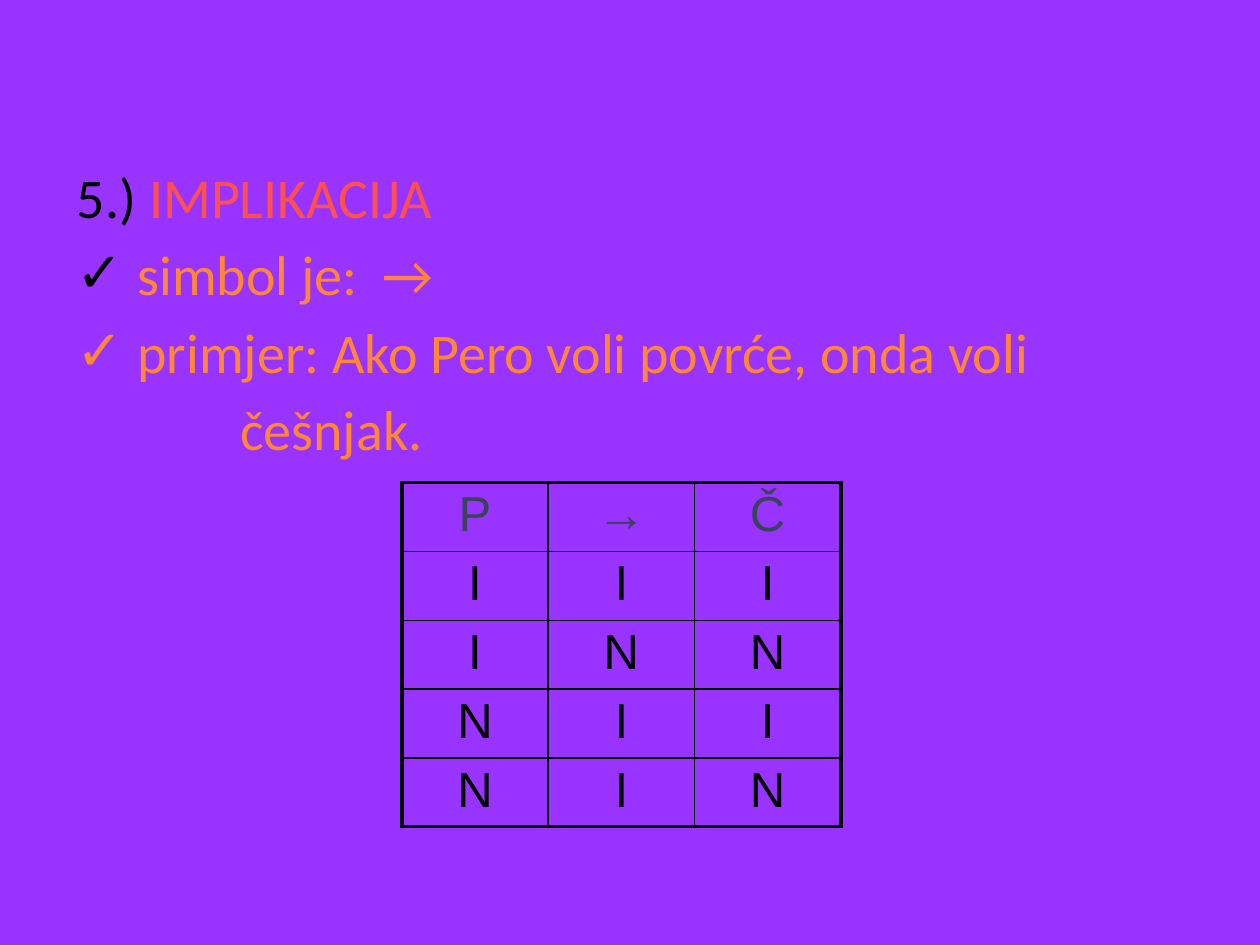
from dataclasses import dataclass

from lxml import etree
from pptx import Presentation
from pptx import util as u
from pptx.dml.color import RGBColor
from pptx.enum import text
from pptx.oxml import ns

BLACK, RED, ORANGE, SLATE, PURPLE = "000000", "FF5050", "FE8637", "3B435B", "9933FF"
BODY_FONT = {"name": "Calibri", "size": u.Pt(32)}
CELL_FONT = {"name": "Arial", "size": u.Pt(28)}
LINE_FORMAT = {"space_before": u.Pt(5.8)}
FRAME_FORMAT = {"word_wrap": True, "vertical_anchor": text.MSO_ANCHOR.TOP}
CELL_FORMAT = {"margin_top": u.Cm(0.1), "margin_bottom": u.Cm(0.1),
               "vertical_anchor": text.MSO_ANCHOR.TOP}
OUTER, INNER = u.Pt(2.25), u.Pt(1)


@dataclass
class Line:
    runs: list[tuple[str, str]]
    left: float = 0
    check_color: str = ""


LINES = [
    Line([("5.) ", BLACK), ("IMPLIKACIJA", RED)]),
    Line([("simbol je:  →", ORANGE)], 1.22, BLACK),
    Line([("primjer: Ako Pero voli povrće, onda voli", ORANGE)], 1.22, ORANGE),
    Line([("češnjak.", ORANGE)], 3.29),
]
TRUTH_ROWS = ["P→Č", "III", "INN", "NII", "NIN"]


def color(hex_value: str) -> RGBColor:
    return RGBColor.from_string(hex_value)


def apply(target, values: dict) -> None:
    for key, value in values.items():
        setattr(target, key, value)


def sub(parent, tag: str, **attributes):
    return etree.SubElement(parent, ns.qn(tag), attributes)


def add_run(paragraph, words: str, font: dict, hex_value: str) -> None:
    run = paragraph.add_run()
    run.text = words
    apply(run.font, font)
    run.font.color.rgb = color(hex_value)


def write_line(paragraph, line: Line) -> None:
    apply(paragraph, LINE_FORMAT)
    properties = paragraph._p.get_or_add_pPr()
    properties.set("marL", str(u.Cm(line.left)))
    if line.check_color:
        properties.set("indent", str(-u.Cm(line.left)))
        sub(sub(properties, "a:buClr"), "a:srgbClr", val=line.check_color)
        sub(properties, "a:buFont", typeface="Arial")
        sub(properties, "a:buChar", char="✓")
    for words, hex_value in line.runs:
        add_run(paragraph, words, BODY_FONT, hex_value)


def draw_cell(cell, symbol: str, hex_value: str, borders: dict[str, int]) -> None:
    apply(cell, CELL_FORMAT)
    for side, width in borders.items():
        border = sub(cell._tc.get_or_add_tcPr(), f"a:ln{side}", w=str(width))
        sub(sub(border, "a:solidFill"), "a:srgbClr", val=BLACK)
    cell.fill.background()
    paragraph = cell.text_frame.paragraphs[0]
    paragraph.alignment = text.PP_ALIGN.CENTER
    add_run(paragraph, symbol, CELL_FONT, hex_value)


def draw_truth_table(slide, rows: list[str]) -> None:
    height, width = len(rows), len(rows[0])
    column_width, row_height = u.Cm(2.95), u.Cm(1.35)
    table = slide.shapes.add_table(height, width, u.Cm(8.1), u.Cm(9.73),
                                   column_width * width, row_height * height).table
    apply(table, {"first_row": False, "horz_banding": False})
    for r, symbols in enumerate(rows):
        for c, symbol in enumerate(symbols):
            at_edge = {"L": c == 0, "R": c == width - 1,
                       "T": r == 0, "B": r == height - 1}
            borders = {side: OUTER if edge else INNER for side, edge in at_edge.items()}
            draw_cell(table.cell(r, c), symbol, BLACK if r else SLATE, borders)


def main() -> None:
    deck = Presentation()
    apply(deck, {"slide_width": u.Cm(25.4), "slide_height": u.Cm(19.05)})
    slide = deck.slides.add_slide(deck.slide_layouts[6])
    slide.background.fill.solid()
    slide.background.fill.fore_color.rgb = color(PURPLE)

    # Definition of implication, its symbol and an example
    frame = slide.shapes.add_textbox(u.Cm(1.3), u.Cm(3.15), u.Cm(22.86), u.Cm(12.57)).text_frame
    apply(frame, FRAME_FORMAT)
    for i, line in enumerate(LINES):
        write_line(frame.add_paragraph() if i else frame.paragraphs[0], line)

    # Truth table
    draw_truth_table(slide, TRUTH_ROWS)
    deck.save("out.pptx")


if __name__ == "__main__":
    main()
